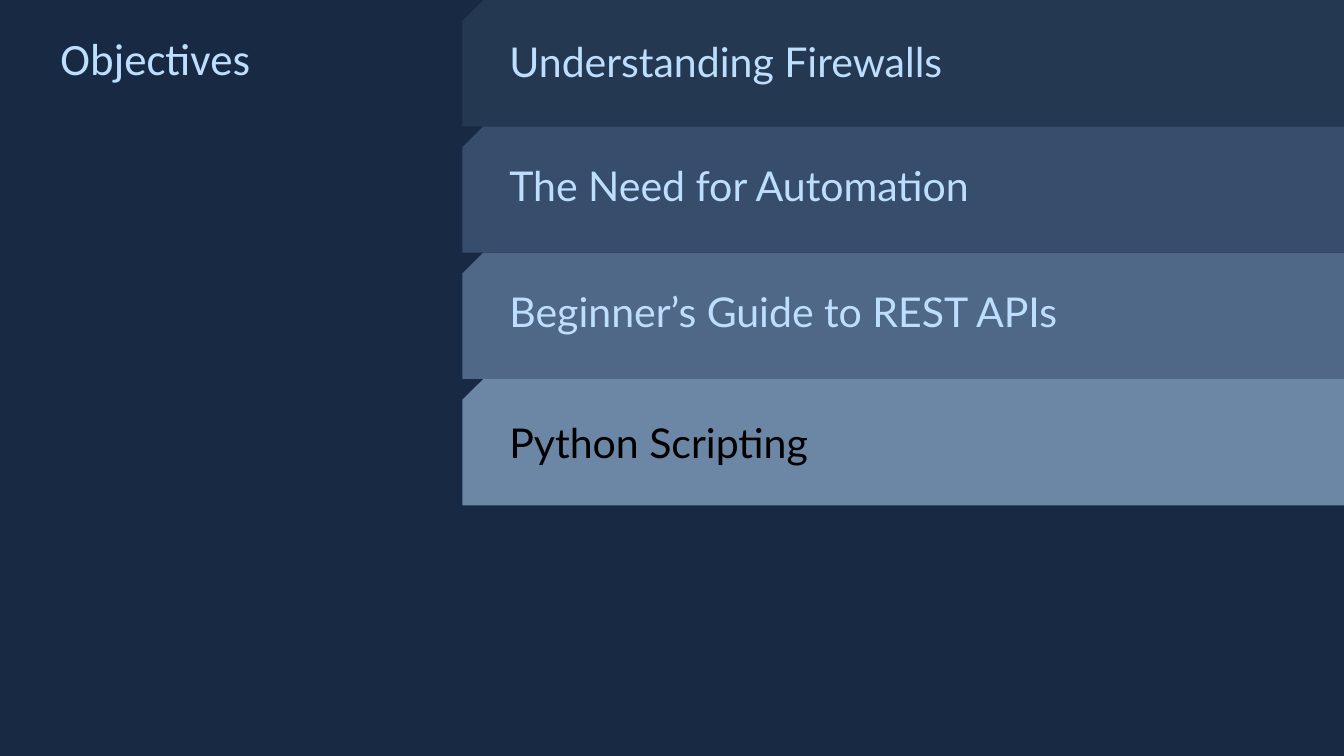
"""Build the objectives slide: a heading beside four stacked, corner-snipped bands."""
from pptx import Presentation
from pptx.dml.color import RGBColor
from pptx.enum.shapes import MSO_SHAPE as Shape
from pptx.enum.text import MSO_ANCHOR as Anchor
from pptx.oxml.ns import qn
from pptx.util import Inches, Pt

COLORS = {
    "background": "182A43",
    "light": "BEDEFF",
    "dark": "000000",
    "band 1": "253851",
    "band 2": "364D6C",
    "band 3": "4F6887",
    "band 4": "6C87A6",
}
HEADING = "Objectives"
OBJECTIVES = [
    ("Understanding Firewalls", "band 1", "light", 0.24),
    ("The Need for Automation", "band 2", "light", 0.22),
    ("Beginner’s Guide to REST APIs", "band 3", "light", 0.22),
    ("Python Scripting", "band 4", "dark", 0.25),
]

WIDTH = 10
HEIGHT = WIDTH * 9 / 16
BAND_LEFT, BAND_HEIGHT = 3.44, 0.94
LABEL_LEFT, LABEL_WIDTH, LABEL_HEIGHT = 3.79, 6.19, 0.5


def color(name):
    return RGBColor.from_string(COLORS[name])


def add_band(page, top, fill):
    band = page.shapes.add_shape(
        Shape.SNIP_1_RECTANGLE, Inches(BAND_LEFT), Inches(top),
        Inches(WIDTH - BAND_LEFT), Inches(BAND_HEIGHT))
    band.element.spPr.find(qn("a:xfrm")).set("flipH", "1")
    band.adjustments[0] = 1 / 6
    band.shadow.inherit = False
    band.fill.solid()
    band.fill.fore_color.rgb = color(fill)
    band.line.fill.background()


def add_label(page, text, left, top, width, size, font, ink, anchor):
    box = page.shapes.add_textbox(
        Inches(left), Inches(top), Inches(width), Inches(LABEL_HEIGHT))
    frame = box.text_frame
    frame.text = text
    frame.word_wrap = True
    frame.vertical_anchor = anchor
    frame.margin_left = frame.margin_top = frame.margin_bottom = 0
    frame.margin_right = Inches(0.1)
    para = frame.paragraphs[0]
    para.line_spacing = 0.8
    span = para.runs[0]
    span.font.size = Pt(size)
    span.font.name = font
    span.font.color.rgb = color(ink)


def main():
    deck = Presentation()
    deck.slide_width, deck.slide_height = Inches(WIDTH), Inches(HEIGHT)
    page = deck.slides.add_slide(deck.slide_layouts[6])
    page.background.fill.solid()
    page.background.fill.fore_color.rgb = color("background")

    for row, (_, fill, _, _) in reversed(list(enumerate(OBJECTIVES))):
        add_band(page, row * BAND_HEIGHT, fill)
    add_label(page, HEADING, 0.45, 0.31, 2.36, 24, "Calibri", "light", Anchor.TOP)
    for row, (text, _, ink, inset) in enumerate(OBJECTIVES):
        add_label(page, text, LABEL_LEFT, row * BAND_HEIGHT + inset, LABEL_WIDTH,
                  22, "Lato", ink, Anchor.MIDDLE)
    deck.save("out.pptx")


if __name__ == "__main__":
    main()
